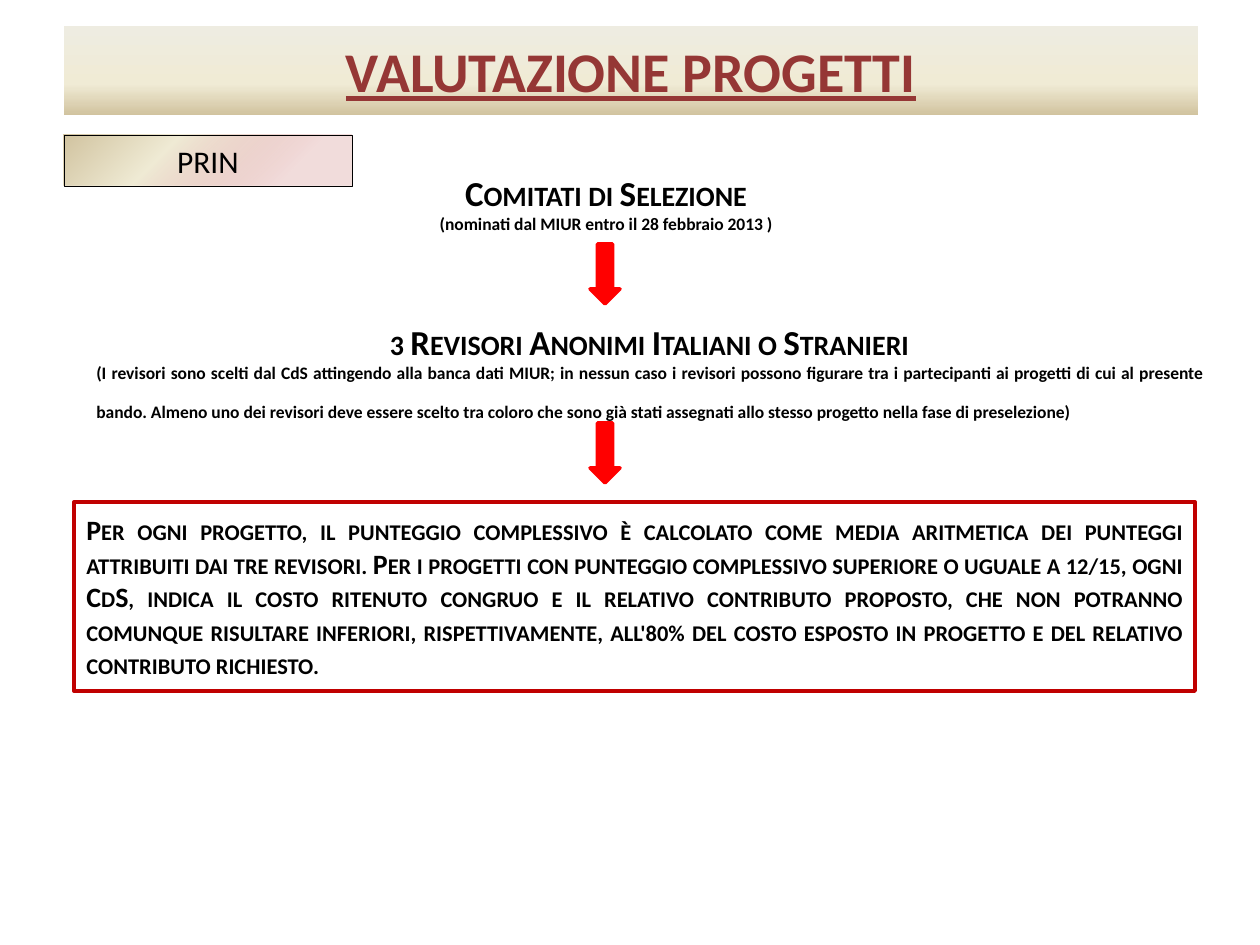
from lxml import etree
from pptx import Presentation
from pptx import util as u
from pptx.dml.color import RGBColor
from pptx.enum import shapes, text
from pptx.oxml.ns import qn

EMU_PER_PX = 914400 / 126
COLORS = {
    "title": "953735", "text": "000000", "frame": "C00000", "arrow": "FF0000",
    "cream": "EEECE1", "ivory": "F0EBD5", "tan": "D1C39F", "rose": "D99694",
}
CENTER, JUSTIFY = text.PP_ALIGN.CENTER, text.PP_ALIGN.JUSTIFY
HEADING = {"size": u.Pt(20), "bold": True}
NOTE = {"size": u.Pt(10), "bold": True}
REVIEWERS_NOTE = (
    "(I revisori sono scelti dal CdS attingendo alla banca dati MIUR; in nessun caso i revisori "
    "possono figurare tra i partecipanti ai progetti di cui al presente bando. Almeno uno dei "
    "revisori deve essere scelto tra coloro che sono già stati assegnati allo stesso progetto "
    "nella fase di preselezione)")
SCORE_RULE = (
    "Per ogni progetto, il punteggio complessivo è calcolato come media aritmetica dei punteggi "
    "attribuiti dai tre revisori. Per i progetti con punteggio complessivo superiore o uguale a "
    "12/15, ogni CdS, indica il costo ritenuto congruo e il relativo contributo proposto, che non "
    "potranno comunque risultare inferiori, rispettivamente, all'80% del costo esposto in progetto "
    "e del relativo contributo richiesto.")


def px(*lengths):
    return [u.Emu(round(length * EMU_PER_PX)) for length in lengths]


def color(name):
    return RGBColor.from_string(COLORS[name])


def set_gradient(shape, stops, angle):
    """Stops are (position %, colour name, opacity %); the angle runs clockwise."""
    shape.fill.gradient()
    gradient = shape._element.spPr.find(qn("a:gradFill"))
    stop_list = gradient.find(qn("a:gsLst"))
    for stop in list(stop_list):
        stop_list.remove(stop)
    for position, name, opacity in stops:
        stop = etree.SubElement(stop_list, qn("a:gs"), pos=str(position * 1000))
        fill = etree.SubElement(stop, qn("a:srgbClr"), val=COLORS[name])
        if opacity < 100:
            etree.SubElement(fill, qn("a:alpha"), val=str(opacity * 1000))
    gradient.find(qn("a:lin")).set("ang", str(angle * 60000))


def add_run(paragraph, words, formats, ink="text", small_caps=False):
    run = paragraph.add_run()
    run.text = words
    run.font.name = "Calibri"
    run.font.color.rgb = color(ink)
    for name, value in formats.items():
        setattr(run.font, name, value)
    if small_caps:
        run.font._element.set("cap", "small")


def set_frame(shape, anchor):
    frame = shape.text_frame
    settings = {"word_wrap": True, "auto_size": text.MSO_AUTO_SIZE.NONE,
                "vertical_anchor": anchor}
    for name, value in settings.items():
        setattr(frame, name, value)
    return frame


def first_paragraph(shape, alignment, anchor=text.MSO_ANCHOR.MIDDLE):
    paragraph = set_frame(shape, anchor).paragraphs[0]
    paragraph.alignment = alignment
    return paragraph


def add_shape(slide, kind, box, line, width):
    shape = slide.shapes.add_shape(kind, *px(*box))
    shape.shadow.inherit = False
    shape.fill.background()
    shape.line.color.rgb = color(line)
    shape.line.width = u.Pt(width)
    return shape


def add_title(slide):
    title = slide.shapes.title
    title.left, title.top, title.width, title.height = px(64, 26, 1134, 89)
    set_gradient(title, [(0, "cream", 100), (65, "ivory", 100), (100, "tan", 100)], 90)
    add_run(first_paragraph(title, CENTER), "VALUTAZIONE PROGETTI",
            {"size": u.Pt(32), "bold": True, "underline": True}, "title")


def add_step(slide, box, heading, note, note_alignment):
    """A small-caps heading over a note; returns the note's paragraph."""
    step = slide.shapes.add_textbox(*px(*box))
    add_run(first_paragraph(step, CENTER, text.MSO_ANCHOR.TOP), heading, HEADING, small_caps=True)
    paragraph = step.text_frame.add_paragraph()
    paragraph.alignment = note_alignment
    add_run(paragraph, note, NOTE)
    return paragraph


def add_arrow(slide, top):
    arrow = add_shape(slide, shapes.MSO_SHAPE.DOWN_ARROW, (590, top, 30, 60), "arrow", 2)
    arrow.fill.solid()
    arrow.fill.fore_color.rgb = color("arrow")


def main():
    presentation = Presentation()
    presentation.slide_width, presentation.slide_height = u.Inches(10), u.Inches(7.5)
    slide = presentation.slides.add_slide(presentation.slide_layouts[5])
    rectangle = shapes.MSO_SHAPE.RECTANGLE

    # Title band and programme label
    add_title(slide)
    label = add_shape(slide, rectangle, (64, 135, 288, 51), "text", 0.25)
    set_gradient(label, [(22, "rose", 33), (65, "ivory", 100), (100, "tan", 100)], 225)
    add_run(first_paragraph(label, CENTER), "PRIN", {"size": u.Pt(18)})

    # Scoring rule
    rule = add_shape(slide, rectangle, (74, 502, 1121, 189), "frame", 2.25)
    add_run(first_paragraph(rule, JUSTIFY), SCORE_RULE,
            {"size": u.Pt(16), "bold": True}, small_caps=True)

    # Selection steps
    add_step(slide, (422, 165, 368, 77), "Comitati di Selezione",
             "(nominati dal MIUR entro il 28 febbraio 2013 )", CENTER)
    note = add_step(slide, (84, 314, 1131, 118), "3 Revisori Anonimi Italiani o Stranieri",
                    REVIEWERS_NOTE, JUSTIFY)
    add_run(note, " ", HEADING, small_caps=True)  # the larger size opens up the last line

    # Arrows between the steps
    for top in (244, 423):
        add_arrow(slide, top)

    presentation.save("out.pptx")


if __name__ == "__main__":
    main()
